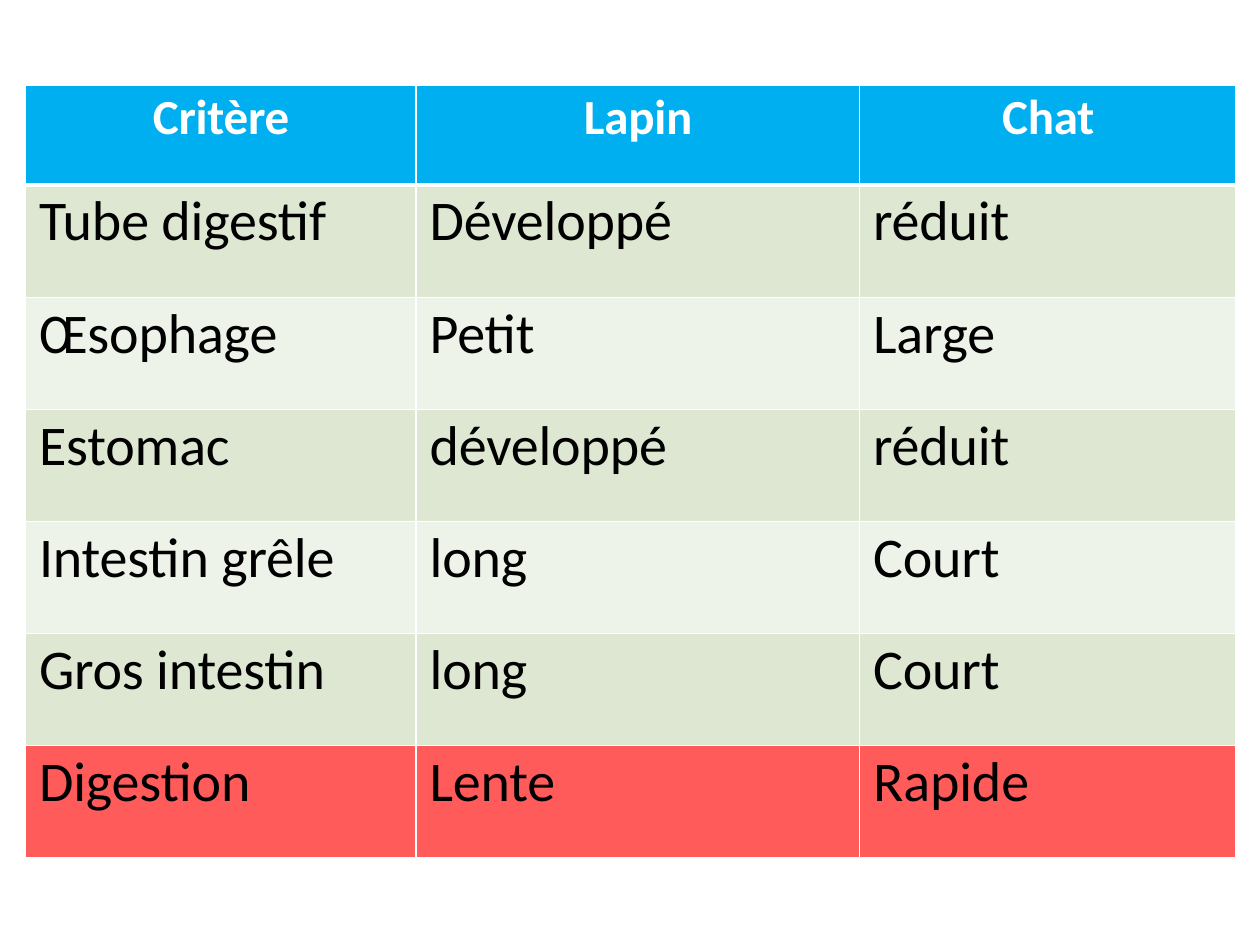
from typing import NamedTuple

from lxml import etree
from pptx import Presentation
from pptx.dml.color import RGBColor
from pptx.enum.text import PP_ALIGN
from pptx.oxml.ns import qn
from pptx.util import Inches, Pt

CENTER, LEFT = PP_ALIGN.CENTER, PP_ALIGN.LEFT
WHITE = RGBColor(0xFF, 0xFF, 0xFF)
BLACK = RGBColor(0x00, 0x00, 0x00)
BLUE = RGBColor(0x00, 0xAF, 0xEF)
GREEN = RGBColor(0xDE, 0xE7, 0xD1)
PALE_GREEN = RGBColor(0xEE, 0xF3, 0xEA)
RED = RGBColor(0xFF, 0x5B, 0x5B)

THIN, THICK = 1, 3
TRACKING = -10  # hundredths of a point
COL_WIDTHS = (3.1, 3.52, 2.99)
HEADER_HEIGHT, ROW_HEIGHT = 0.79, 0.89


class RowStyle(NamedTuple):
    fill: RGBColor
    color: RGBColor = BLACK
    size: int = 32
    bold: bool = False
    align: PP_ALIGN = LEFT
    indent: float = 0.11
    space_before: float = 1.6


HEADER = RowStyle(BLUE, WHITE, 28, True, CENTER, 0.01, 1.8)
ODD, EVEN = RowStyle(GREEN), RowStyle(PALE_GREEN)
RESULT = RowStyle(RED, space_before=1.7)

ROWS = (
    (HEADER, ("Critère", "Lapin", "Chat")),
    (ODD, ("Tube digestif", "Développé", "réduit")),
    (EVEN, ("Œsophage", "Petit", "Large")),
    (ODD, ("Estomac", "développé", "réduit")),
    (EVEN, ("Intestin grêle", "long", "Court")),
    (ODD, ("Gros intestin", "long", "Court")),
    (RESULT, ("Digestion", "Lente", "Rapide")),
)


def set_borders(cell, top: int, bottom: int) -> None:
    """Draw white borders; the line elements must come before the fill."""
    tc_pr = cell._tc.get_or_add_tcPr()
    widths = {"a:lnL": THIN, "a:lnR": THIN, "a:lnT": top, "a:lnB": bottom}
    for i, (tag, width) in enumerate(widths.items()):
        ln = etree.Element(qn(tag), w=str(Pt(width)))
        fill = etree.SubElement(ln, qn("a:solidFill"))
        etree.SubElement(fill, qn("a:srgbClr"), val=str(WHITE))
        tc_pr.insert(i, ln)


def fill_cell(cell, text: str, style: RowStyle) -> None:
    margins = {"margin_left": 0, "margin_right": 0,
               "margin_top": Inches(0.02), "margin_bottom": 0}
    for name, value in margins.items():
        setattr(cell, name, value)
    cell.fill.solid()
    cell.fill.fore_color.rgb = style.fill

    p = cell.text_frame.paragraphs[0]
    p.alignment = style.align
    p.space_before = Pt(style.space_before)
    p_pr = p._p.get_or_add_pPr()
    p_pr.set("marL", str(Inches(style.indent)))
    p_pr.set("indent", "0")

    r = p.add_run()
    r.text = text
    font_format = {"name": "Calibri", "size": Pt(style.size), "bold": style.bold}
    for name, value in font_format.items():
        setattr(r.font, name, value)
    r.font.color.rgb = style.color
    r._r.get_or_add_rPr().set("spc", str(TRACKING))


def main() -> None:
    prs = Presentation()
    prs.slide_width, prs.slide_height = Inches(10), Inches(7.5)
    s = prs.slides.add_slide(prs.slide_layouts[6])

    heights = [HEADER_HEIGHT] + [ROW_HEIGHT] * (len(ROWS) - 1)
    table = s.shapes.add_table(
        len(ROWS), len(COL_WIDTHS), Inches(0.2), Inches(0.68),
        Inches(sum(COL_WIDTHS)), Inches(sum(heights))).table
    for column, width in zip(table.columns, COL_WIDTHS):
        column.width = Inches(width)

    for i, (style, texts) in enumerate(ROWS):
        table.rows[i].height = Inches(heights[i])
        for j, text in enumerate(texts):
            cell = table.cell(i, j)
            fill_cell(cell, text, style)
            set_borders(cell, top=THICK if i == 1 else THIN,
                        bottom=THICK if i == 0 else THIN)

    prs.save("out.pptx")


if __name__ == "__main__":
    main()
